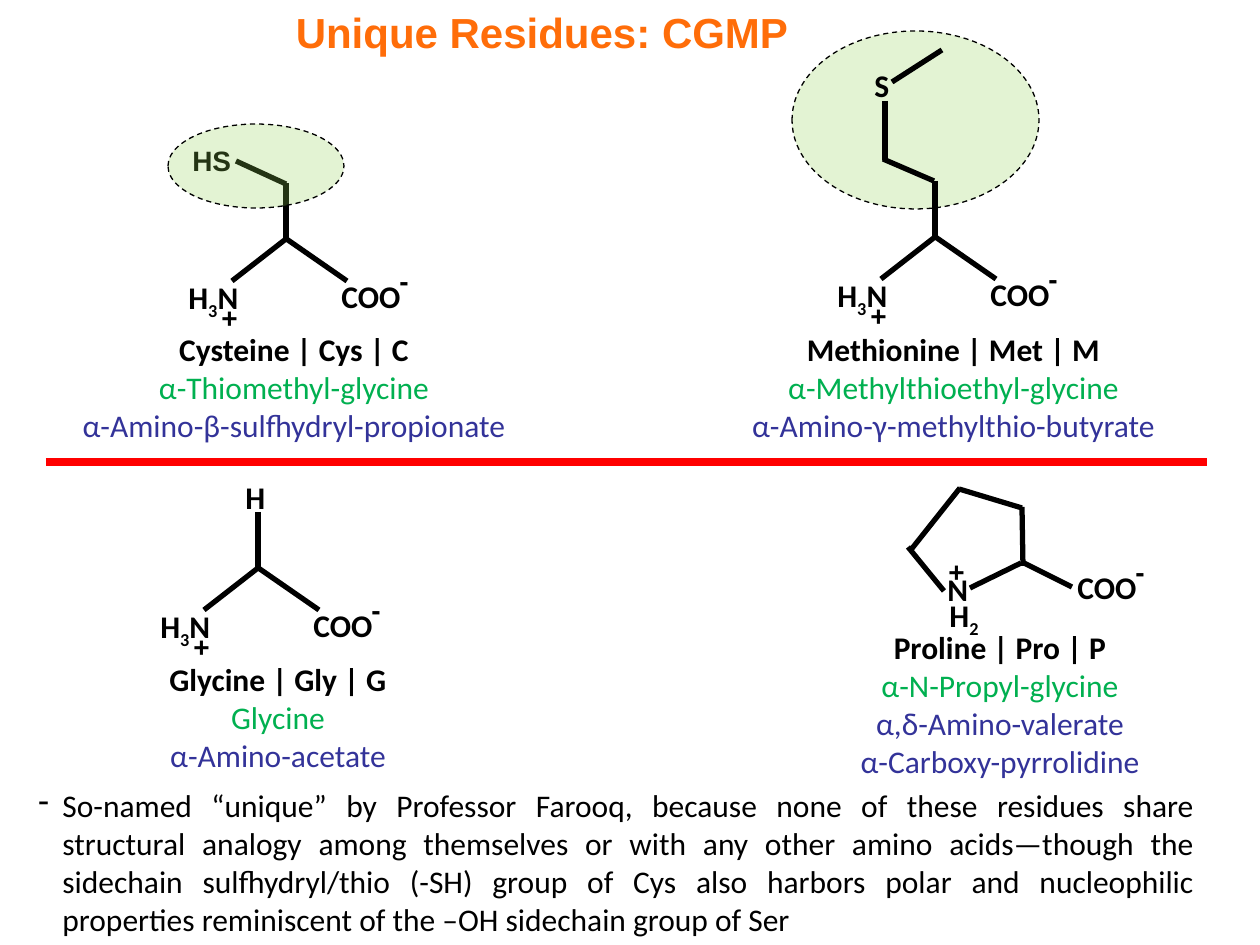
from dataclasses import dataclass

from lxml import etree
from pptx import Presentation
from pptx import util as u
from pptx.dml.color import RGBColor
from pptx.enum import dml, shapes, text
from pptx.oxml.ns import qn

PX_PER_INCH = 126
BLACK, WHITE, GREEN, BLUE = "000000", "FFFFFF", "00B050", "333399"
RED, ORANGE, LIME = "FF0000", "FF6D09", "92D050"


@dataclass(frozen=True)
class Box:
    left: int
    top: int
    width: int
    height: int


@dataclass(frozen=True)
class Label:
    symbols: tuple[str, ...]
    width: int
    height: int = 50
    font: str = "Calibri"
    size: int = 18
    fill: str | None = None


@dataclass(frozen=True)
class Bond:
    x1: int
    y1: int
    x2: int
    y2: int


@dataclass(frozen=True)
class Caption:
    box: Box
    lines: tuple[str, ...]


AMINO = Label(("H", "3", "N"), 77, fill=WHITE)
CARBOXYL = Label(("COO",), 84, fill=WHITE)
PLUS = Label(("+",), 42, 47, "Arial", 16)
MINUS = Label(("-",), 35, 47, "Arial", 16)
THIOL = Label(("HS",), 64, 47, "Arial", 16)
HYDROGEN = Label(("H",), 45)
SULFUR = Label(("S",), 40)
NITROGEN = Label(("N",), 47)
HYDROGENS = Label(("H", "2"), 57)

BACKBONE_BONDS = (Bond(0, -56, 0, 3), Bond(-1, -1, 61, 42), Bond(0, 0, -54, 42))
METHIONINE_BONDS = (
    Bond(934, 181, 883, 159),
    Bond(885, 101, 885, 160),
    Bond(942, 50, 892, 82),
)
PROLINE_BONDS = (
    Bond(1022, 507, 1023, 566),
    Bond(1022, 508, 959, 489),
    Bond(1022, 562, 1072, 587),
    Bond(1021, 563, 970, 588),
    Bond(960, 488, 910, 551),
    Bond(908, 547, 944, 591),
)
CAPTIONS = (
    Caption(Box(64, 324, 460, 127), (
        "Cysteine | Cys | C", "α-Thiomethyl-glycine", "α-Amino-β-sulfhydryl-propionate")),
    Caption(Box(737, 324, 433, 127), (
        "Methionine | Met | M", "α-Methylthioethyl-glycine", "α-Amino-γ-methylthio-butyrate")),
    Caption(Box(154, 654, 248, 127), (
        "Glycine | Gly | G", "Glycine", "α-Amino-acetate")),
    Caption(Box(845, 622, 310, 165), (
        "Proline | Pro | P", "α-N-Propyl-glycine", "α,δ-Amino-valerate",
        "α-Carboxy-pyrrolidine")),
)
NOTE = (
    "So-named “unique” by Professor Farooq, because none of these residues share "
    "structural analogy among themselves or with any other amino acids—though the "
    "sidechain sulfhydryl/thio (-SH) group of Cys also harbors polar and nucleophilic "
    "properties reminiscent of the –OH sidechain group of Ser"
)


def px(length: int) -> int:
    return round(length * 914400 / PX_PER_INCH)


def color(value: str) -> RGBColor:
    return RGBColor.from_string(value)


def frame(box: Box) -> tuple[int, int, int, int]:
    return px(box.left), px(box.top), px(box.width), px(box.height)


def style(font, name: str, size: int, hue: str, bold: bool) -> None:
    font.name = name
    font.size = u.Pt(size)
    font.color.rgb = color(hue)
    font.bold = bold


def draw_title(slide) -> None:
    title = slide.shapes.title
    title.left, title.top, title.width, title.height = frame(Box(273, 0, 538, 63))
    title.text_frame.text = "Unique Residues: CGMP"
    title.text_frame.auto_size = text.MSO_AUTO_SIZE.NONE
    paragraph = title.text_frame.paragraphs[0]
    paragraph.alignment = text.PP_ALIGN.CENTER
    style(paragraph.runs[0].font, "Arial", 24, ORANGE, True)


def draw_line(slide, bond: Bond, hue: str = BLACK, width: int = 3) -> None:
    line = slide.shapes.add_connector(
        shapes.MSO_CONNECTOR.STRAIGHT, px(bond.x1), px(bond.y1), px(bond.x2), px(bond.y2))
    line.line.color.rgb = color(hue)
    line.line.width = u.Pt(width)
    etree.SubElement(line._element.spPr, qn("a:effectLst"))


def draw_label(slide, label: Label, left: int, top: int) -> None:
    shape = slide.shapes.add_textbox(*frame(Box(left, top, label.width, label.height)))
    if label.fill:
        shape.fill.solid()
        shape.fill.fore_color.rgb = color(label.fill)
    shape.text_frame.word_wrap = False
    paragraph = shape.text_frame.paragraphs[0]
    for symbol in label.symbols:
        run = paragraph.add_run()
        run.text = symbol
        style(run.font, label.font, label.size, BLACK, True)
        if symbol.isdigit():
            run._r.get_or_add_rPr().set("baseline", "-25000")


def draw_carboxylate(slide, left: int, top: int) -> None:
    draw_label(slide, CARBOXYL, left, top)
    draw_label(slide, MINUS, left + 58, top - 14)


def draw_backbone(slide, x: int, y: int) -> None:
    draw_label(slide, AMINO, x - 110, y + 33)
    draw_label(slide, PLUS, x - 77, y + 55)
    draw_carboxylate(slide, x + 43, y + 32)
    for bond in BACKBONE_BONDS:
        draw_line(slide, Bond(x + bond.x1, y + bond.y1, x + bond.x2, y + bond.y2))


def draw_highlight(slide, box: Box) -> None:
    shape = slide.shapes.add_shape(shapes.MSO_SHAPE.OVAL, *frame(box))
    shape.shadow.inherit = False
    shape.fill.solid()
    shape.fill.fore_color.rgb = color(LIME)
    hue = shape._element.spPr.find(f"{qn('a:solidFill')}/{qn('a:srgbClr')}")
    etree.SubElement(hue, qn("a:alpha")).set("val", "25000")
    shape.line.color.rgb = color(BLACK)
    shape.line.width = u.Pt(0.75)
    shape.line.dash_style = dml.MSO_LINE.DASH


def draw_caption(slide, caption: Caption) -> None:
    text_frame = slide.shapes.add_textbox(*frame(caption.box)).text_frame
    text_frame.word_wrap = False
    text_frame.text = "\n".join(caption.lines)
    for index, paragraph in enumerate(text_frame.paragraphs):
        paragraph.alignment = text.PP_ALIGN.CENTER
        hue = (BLACK, GREEN, BLUE)[min(index, 2)]
        style(paragraph.runs[0].font, "Calibri", 18, hue, index == 0)


def draw_note(slide) -> None:
    text_frame = slide.shapes.add_textbox(*frame(Box(26, 780, 1181, 165))).text_frame
    text_frame.word_wrap = True
    text_frame.text = NOTE
    paragraph = text_frame.paragraphs[0]
    paragraph.alignment = text.PP_ALIGN.JUSTIFY
    style(paragraph.runs[0].font, "Calibri", 18, BLACK, False)
    properties = paragraph._p.get_or_add_pPr()
    properties.set("marL", str(px(24)))
    properties.set("indent", str(-px(24)))
    etree.SubElement(properties, qn("a:buChar")).set("char", "-")


def main() -> None:
    presentation = Presentation()
    presentation.slide_width, presentation.slide_height = px(1260), px(945)
    slide = presentation.slides.add_slide(presentation.slide_layouts[5])
    draw_title(slide)
    draw_line(slide, Bond(46, 462, 1207, 462), RED, 5)
    draw_highlight(slide, Box(792, 31, 247, 178))
    for x, y in ((286, 239), (935, 237), (258, 568)):
        draw_backbone(slide, x, y)
    draw_label(slide, THIOL, 180, 137)
    draw_label(slide, SULFUR, 862, 60)
    draw_label(slide, HYDROGEN, 233, 472)
    draw_label(slide, NITROGEN, 935, 564)
    draw_label(slide, PLUS, 936, 548)
    draw_label(slide, HYDROGENS, 937, 590)
    draw_carboxylate(slide, 1065, 562)
    for bond in (Bond(286, 184, 236, 161), *METHIONINE_BONDS, *PROLINE_BONDS):
        draw_line(slide, bond)
    draw_highlight(slide, Box(168, 124, 176, 84))
    for caption in CAPTIONS:
        draw_caption(slide, caption)
    draw_note(slide)
    presentation.save("out.pptx")


if __name__ == "__main__":
    main()
